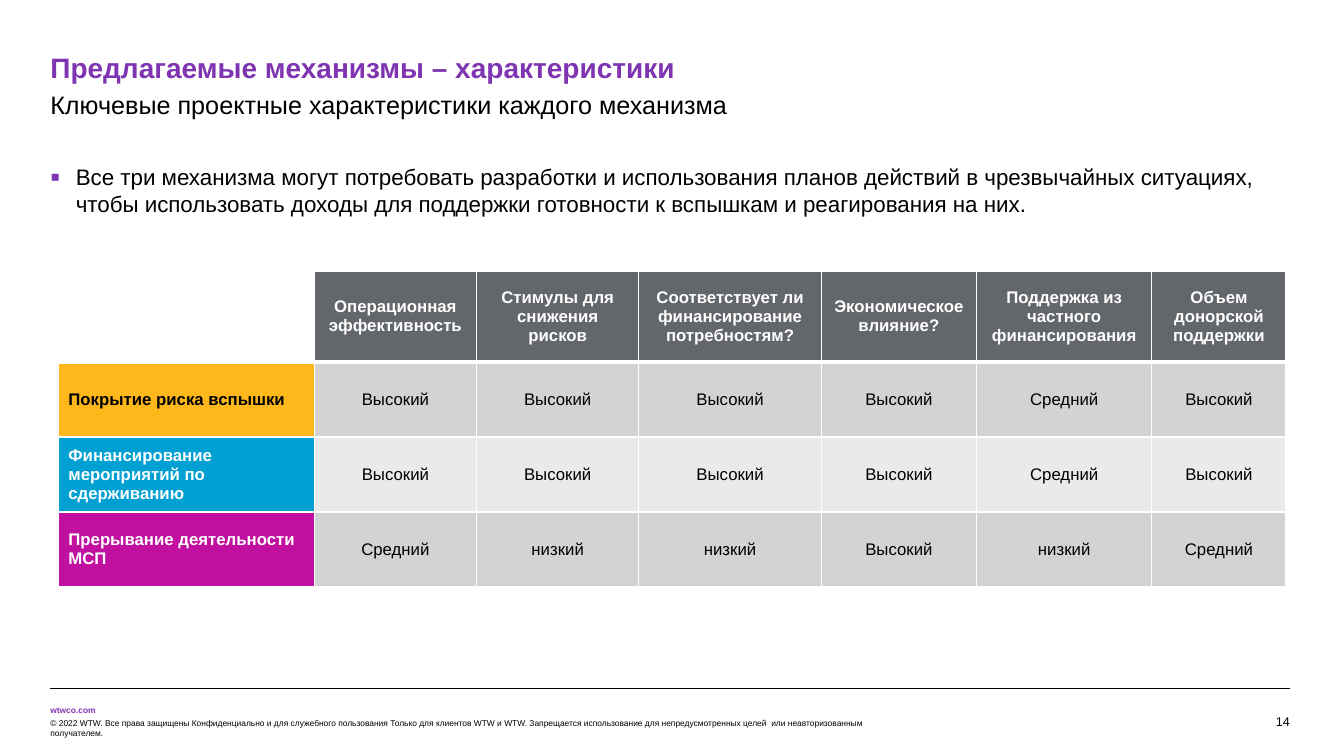
import pptx
import pptx.util
import pptx.dml.color
import pptx.enum.shapes
import pptx.enum.text
from dataclasses import dataclass
from lxml import etree
from pptx.oxml.ns import qn

Cm = pptx.util.Cm
Pt = pptx.util.Pt
ALIGN = pptx.enum.text.PP_ALIGN
ANCHOR = pptx.enum.text.MSO_ANCHOR


@dataclass(frozen=True)
class Theme:
    font: str = "Arial"
    purple: str = "7F35B2"
    black: str = "000000"
    white: str = "FFFFFF"
    header: str = "63666A"
    bands: tuple = ("D3D3D4", "EAEAEB")
    title: int = 20
    subtitle: int = 18
    body: int = 16
    cell: int = 12
    number: int = 9
    small: int = 6


T = Theme()

HEADERS = ["Операционная эффективность", "Стимулы для снижения рисков",
           "Соответствует ли финансирование потребностям?",
           "Экономическое влияние?", "Поддержка из частного финансирования",
           "Объем донорской поддержки"]
HIGH, MEDIUM, LOW = "Высокий", "Средний", "низкий"
# Mechanism, label fill, label colour, ratings
MECHANISMS = [
    ("Покрытие риска вспышки", "FFB81C", T.black,
     [HIGH, HIGH, HIGH, HIGH, MEDIUM, HIGH]),
    ("Финансирование мероприятий по сдерживанию", "00A0D2", T.white,
     [HIGH, HIGH, HIGH, HIGH, MEDIUM, HIGH]),
    ("Прерывание деятельности МСП", "C110A0", T.white,
     [MEDIUM, LOW, LOW, HIGH, LOW, MEDIUM]),
]
COL_WIDTHS = [6.45, 4.09, 4.09, 4.6, 3.91, 4.42, 3.38]
ROW_HEIGHTS = [2.29, 1.89, 1.89, 1.89]


def rgb(value):
    return pptx.dml.color.RGBColor.from_string(value)


def write(tf, text, size=T.body, color=T.black, bold=False,
          align=ALIGN.LEFT, after=0):
    p = tf.paragraphs[0]
    p.alignment = align
    p.space_after = Pt(after)
    r = p.add_run()
    r.text = text
    r.font.name = T.font
    r.font.size = Pt(size)
    r.font.bold = bold
    r.font.color.rgb = rgb(color)
    return p


def prepare_frame(tf, anchor=ANCHOR.TOP):
    tf.margin_left = tf.margin_right = tf.margin_top = tf.margin_bottom = 0
    tf.auto_size = pptx.enum.text.MSO_AUTO_SIZE.NONE
    tf.word_wrap = True
    tf.vertical_anchor = anchor


def add_text(s, x, y, w, h, text, anchor=ANCHOR.TOP, **fmt):
    tf = s.shapes.add_textbox(Cm(x), Cm(y), Cm(w), Cm(h)).text_frame
    prepare_frame(tf, anchor)
    return write(tf, text, **fmt)


def add_bullet(p, indent, char, color, percent):
    pPr = p._p.get_or_add_pPr()
    pPr.set("marL", str(Cm(indent)))
    pPr.set("indent", str(-Cm(indent)))
    buClr = etree.SubElement(pPr, qn("a:buClr"))
    etree.SubElement(buClr, qn("a:srgbClr"), val=color)
    etree.SubElement(pPr, qn("a:buSzPct"), val=str(percent * 1000))
    etree.SubElement(pPr, qn("a:buFont"), typeface=T.font)
    etree.SubElement(pPr, qn("a:buChar"), char=char)


def add_heading(s, x, y, w):
    title = s.shapes.title
    title.left, title.top, title.width, title.height = Cm(x), Cm(y), Cm(w), Cm(0.86)
    prepare_frame(title.text_frame)
    write(title.text_frame, "Предлагаемые механизмы – характеристики",
          size=T.title, color=T.purple, bold=True)
    add_text(s, x, y + 0.97, w, 0.76,
             "Ключевые проектные характеристики каждого механизма",
             size=T.subtitle, after=3.5)


def add_message(s, x, y, w, h):
    p = add_text(s, x, y, w, h,
                 "Все три механизма могут потребовать разработки и использования "
                 "планов действий в чрезвычайных ситуациях, чтобы использовать "
                 "доходы для поддержки готовности к вспышкам и реагирования на них.",
                 after=3.5)
    add_bullet(p, 0.64, "▪", T.purple, 125)


def set_borders(cell, top, bottom):
    tcPr = cell._tc.get_or_add_tcPr()
    for side, width in (("L", 1), ("R", 1), ("T", top), ("B", bottom)):
        ln = etree.SubElement(tcPr, qn(f"a:ln{side}"), w=str(Pt(width)))
        fill = etree.SubElement(ln, qn("a:solidFill"))
        etree.SubElement(fill, qn("a:srgbClr"), val=T.white)


def format_cell(cell, fill, text="", top=1, bottom=1, **fmt):
    set_borders(cell, top, bottom)
    cell.fill.solid()
    cell.fill.fore_color.rgb = rgb(fill)
    cell.vertical_anchor = ANCHOR.MIDDLE
    if text:
        write(cell.text_frame, text, size=T.cell, **fmt)


def add_ratings(s, x, y):
    frame = s.shapes.add_table(len(ROW_HEIGHTS), len(COL_WIDTHS), Cm(x), Cm(y),
                               Cm(sum(COL_WIDTHS)), Cm(sum(ROW_HEIGHTS)))
    table = frame.table
    table.first_row = table.horz_banding = False
    for col, width in zip(table.columns, COL_WIDTHS):
        col.width = Cm(width)
    for row, height in zip(table.rows, ROW_HEIGHTS):
        row.height = Cm(height)

    # Header row
    format_cell(table.cell(0, 0), T.white, bottom=3)
    for c, text in enumerate(HEADERS, 1):
        format_cell(table.cell(0, c), T.header, text, bottom=3,
                    color=T.white, bold=True, align=ALIGN.CENTER)

    # One row per mechanism
    for i, (name, fill, color, ratings) in enumerate(MECHANISMS, 1):
        top = 3 if i == 1 else 1
        format_cell(table.cell(i, 0), fill, name, top=top, color=color, bold=True)
        for c, rating in enumerate(ratings, 1):
            format_cell(table.cell(i, c), T.bands[(i - 1) % 2], rating, top=top,
                        align=ALIGN.CENTER)


def add_footer(s, x, y, w):
    rule = s.shapes.add_connector(pptx.enum.shapes.MSO_CONNECTOR.STRAIGHT,
                                  Cm(x), Cm(y), Cm(x + w), Cm(y))
    rule.line.color.rgb = rgb(T.black)
    rule.line.width = Pt(0.25)
    etree.SubElement(rule._element.spPr, qn("a:effectLst"))
    add_text(s, x, y + 0.43, 3, 0.25, "wtwco.com", size=T.small,
             color=T.purple, bold=True, after=2)
    add_text(s, x, y + 0.74, 21.59, 0.5,
             "© 2022 WTW. Все права защищены Конфиденциально и для служебного "
             "пользования Только для клиентов WTW и WTW. Запрещается использование "
             "для непредусмотренных целей  или неавторизованным получателем.",
             size=T.small)
    add_text(s, x + w - 1.42, y + 0.63, 1.42, 0.38, "14", anchor=ANCHOR.BOTTOM,
             size=T.number, align=ALIGN.RIGHT)


def main():
    prs = pptx.Presentation()
    prs.slide_width, prs.slide_height = Cm(33.87), Cm(19.05)
    s = prs.slides.add_slide(prs.slide_layouts.get_by_name("Title Only"))
    add_heading(s, 1.27, 1.27, 31.24)
    add_ratings(s, 1.47, 6.83)
    add_message(s, 1.27, 4.11, 31.24, 2.69)
    add_footer(s, 1.27, 17.35, 31.24)
    prs.save("out.pptx")


if __name__ == "__main__":
    main()
